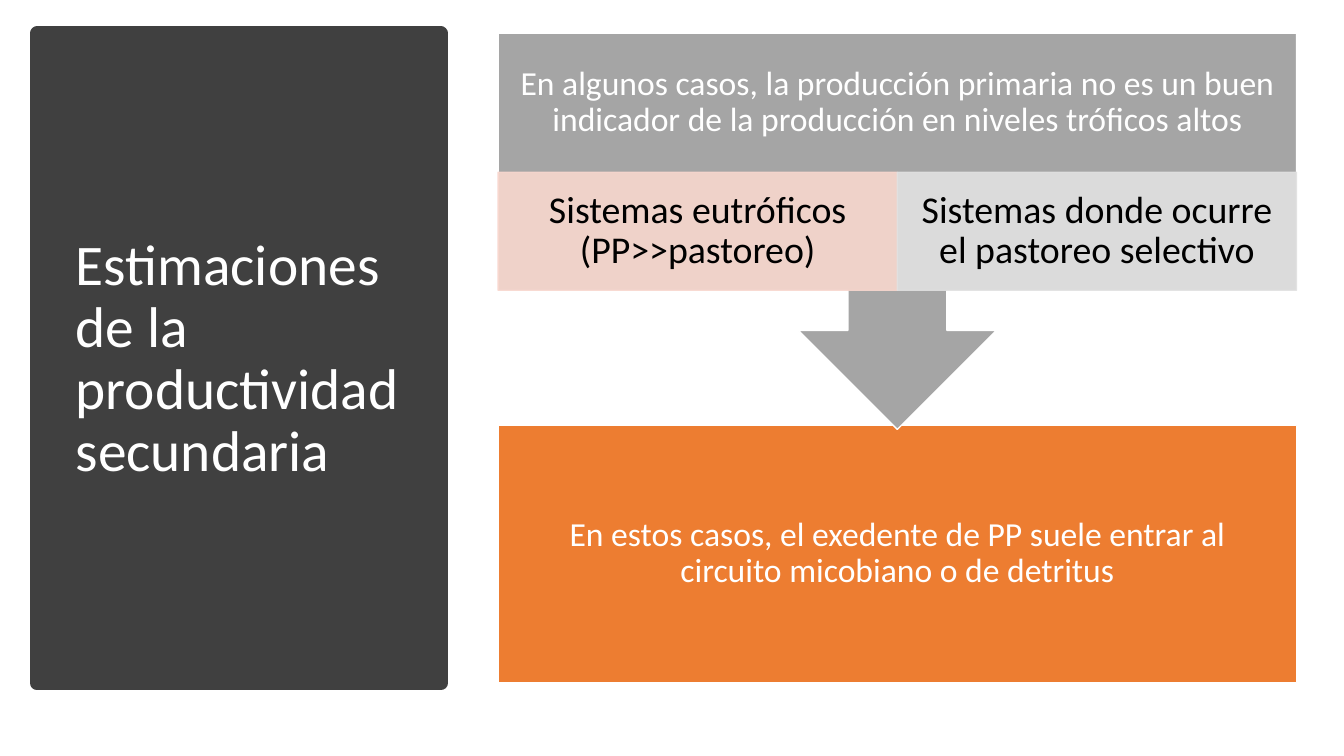
from lxml import etree
from pptx import Presentation
from pptx.dml.color import RGBColor
from pptx.enum.shapes import MSO_SHAPE
from pptx.enum.text import MSO_ANCHOR, MSO_AUTO_SIZE, PP_ALIGN
from pptx.oxml.ns import qn
from pptx.util import Inches, Pt

RECTANGLE, CALLOUT = MSO_SHAPE.RECTANGLE, MSO_SHAPE.UP_ARROW_CALLOUT
MIDDLE, NO_AUTOFIT = MSO_ANCHOR.MIDDLE, MSO_AUTO_SIZE.NONE
LEFT, CENTER = PP_ALIGN.LEFT, PP_ALIGN.CENTER

WHITE = RGBColor(0xFF, 0xFF, 0xFF)
BLACK = RGBColor(0x00, 0x00, 0x00)
CHARCOAL = RGBColor(0x40, 0x40, 0x40)
ORANGE = RGBColor(0xED, 0x7D, 0x31)
GRAY = RGBColor(0xA5, 0xA5, 0xA5)
PINK = RGBColor(0xF8, 0xD7, 0xCE)
PALE_GRAY = RGBColor(0xE1, 0xE1, 0xE1)

TITLE = "Estimaciones de la productividad secundaria"
PREMISE = ("En algunos casos, la producción primaria no es un buen "
           "indicador de la producción en niveles tróficos altos")
CASES = [
    ("Sistemas eutróficos (PP>>pastoreo)", PINK),
    ("Sistemas donde ocurre el pastoreo selectivo", PALE_GRAY),
]
OUTCOME = ("En estos casos, el exedente de PP suele entrar al "
           "circuito micobiano o de detritus")

FONT = "Calibri"
SLIDE_SIZE = (13.33, 7.5)
PANEL = (0.37, 0.33, 4, 6.45)
TITLE_BOX = (0.65, 0.7, 3.46, 5.75)
FLOW_LEFT, FLOW_TOP, FLOW_WIDTH = 4.94, 0.33, 7.92
CALLOUT_HEIGHT, PREMISE_HEIGHT, CASE_HEIGHT = 3.93, 1.38, 1.17
OUTCOME_TOP, OUTCOME_HEIGHT = 4.22, 2.55
WIDE_INSETS = (0.19, 0.19)
CASE_INSETS = (0.21, 0.04)


def add_block(shapes, kind, box, color, line_color, line_width=1, opacity=100):
    block = shapes.add_shape(kind, *map(Inches, box))
    block.shadow.inherit = False
    block.fill.solid()
    block.fill.fore_color.rgb = color
    block.line.color.rgb = line_color
    block.line.width = Pt(line_width)
    if opacity < 100:
        for color_node in block.element.spPr.iter(qn("a:srgbClr")):
            alpha = etree.SubElement(color_node, qn("a:alpha"))
            alpha.set("val", str(opacity * 1000))
    return block


def write(shape, text, size, color, alignment=CENTER, insets=WIDE_INSETS):
    across, down = map(Inches, insets)
    frame = shape.text_frame
    frame.text = text
    frame_format = {
        "word_wrap": True, "auto_size": NO_AUTOFIT, "vertical_anchor": MIDDLE,
        "margin_left": across, "margin_right": across,
        "margin_top": down, "margin_bottom": down,
    }
    for name, value in frame_format.items():
        setattr(frame, name, value)
    paragraph = frame.paragraphs[0]
    paragraph.alignment = alignment
    paragraph.line_spacing = 0.9
    font = paragraph.runs[0].font
    font.name, font.size = FONT, Pt(size)
    font.color.rgb = color


def add_title(slide):
    title = slide.shapes.title
    title.left, title.top, title.width, title.height = map(Inches, TITLE_BOX)
    write(title, TITLE, 41, WHITE, LEFT, (0.1, 0.05))
    panel = add_block(slide.shapes, RECTANGLE, PANEL, CHARCOAL, CHARCOAL, 10)
    title.element.addprevious(panel.element)


def add_flow(shapes):
    outcome = add_block(shapes, RECTANGLE,
                        (FLOW_LEFT, OUTCOME_TOP, FLOW_WIDTH, OUTCOME_HEIGHT),
                        ORANGE, WHITE)
    write(outcome, OUTCOME, 24, WHITE)

    callout = add_block(shapes, CALLOUT,
                        (FLOW_LEFT, FLOW_TOP, FLOW_WIDTH, CALLOUT_HEIGHT),
                        GRAY, WHITE)
    callout.rotation = 180
    premise_box = (FLOW_LEFT, FLOW_TOP, FLOW_WIDTH, PREMISE_HEIGHT)
    premise = shapes.add_textbox(*map(Inches, premise_box))
    write(premise, PREMISE, 24, WHITE)

    case_width = FLOW_WIDTH / len(CASES)
    for column, (text, color) in enumerate(CASES):
        box = (FLOW_LEFT + column * case_width, FLOW_TOP + PREMISE_HEIGHT,
               case_width, CASE_HEIGHT)
        case = add_block(shapes, RECTANGLE, box, color, color, opacity=90)
        write(case, text, 27, BLACK, insets=CASE_INSETS)


def main():
    presentation = Presentation()
    presentation.slide_width, presentation.slide_height = map(Inches, SLIDE_SIZE)
    slide = presentation.slides.add_slide(presentation.slide_layouts[5])
    add_title(slide)
    add_flow(slide.shapes.add_group_shape().shapes)
    presentation.save("out.pptx")


if __name__ == "__main__":
    main()
